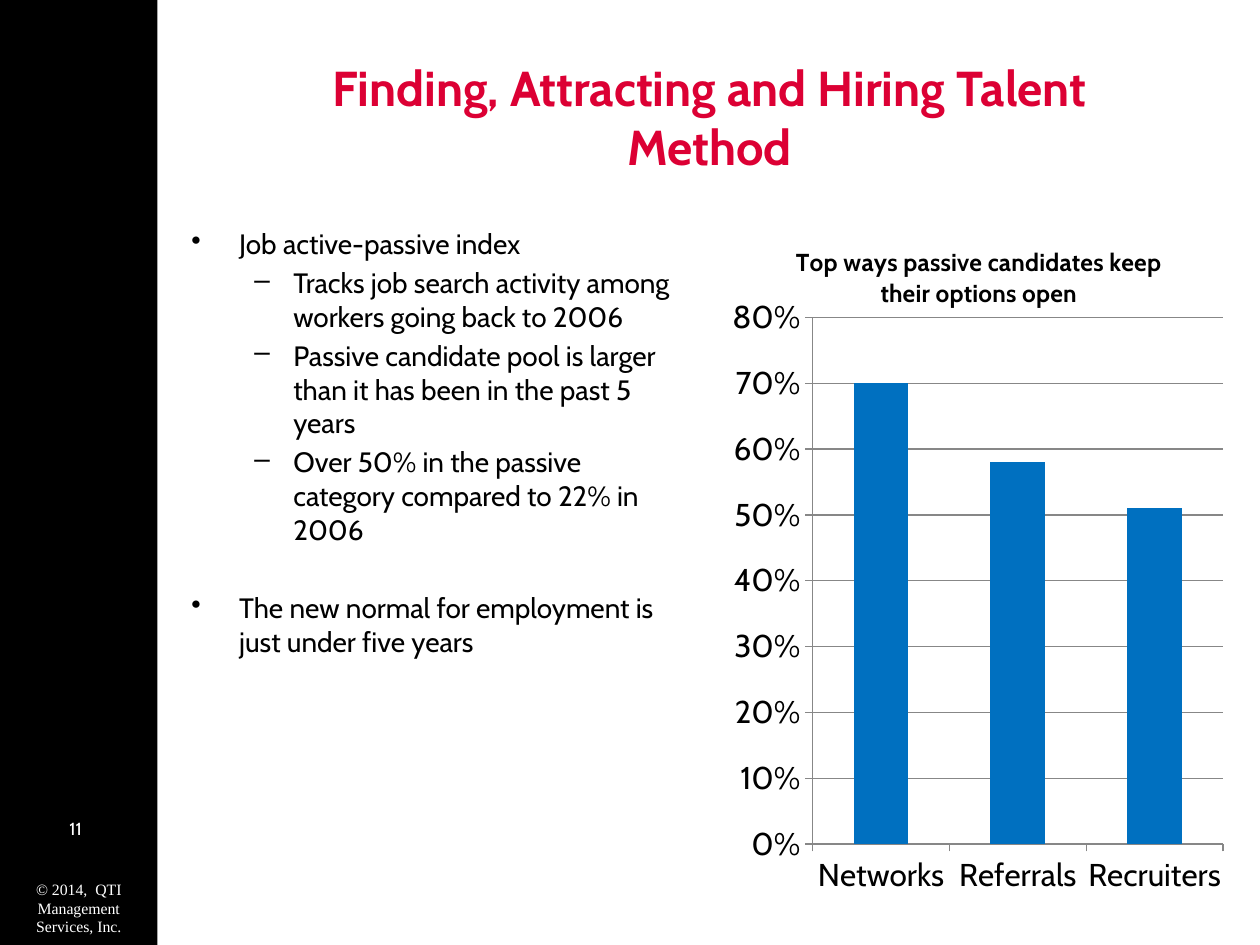
"""Build the talent slide with bullets and a column chart."""
from lxml import etree
from pptx import Presentation
from pptx.chart.data import CategoryChartData
from pptx.dml.color import RGBColor
from pptx.enum.chart import XL_CHART_TYPE, XL_TICK_MARK
from pptx.enum.shapes import MSO_SHAPE
from pptx.enum.text import MSO_ANCHOR, PP_ALIGN
from pptx.oxml.ns import qn
from pptx.util import Inches, Pt

COLUMN = XL_CHART_TYPE.COLUMN_CLUSTERED
OUT = XL_TICK_MARK.OUTSIDE
RECT = MSO_SHAPE.RECTANGLE
TOP, MIDDLE = MSO_ANCHOR.TOP, MSO_ANCHOR.MIDDLE
LEFT, CENTER = PP_ALIGN.LEFT, PP_ALIGN.CENTER
BLACK = RGBColor(0x00, 0x00, 0x00)
WHITE = RGBColor(0xFF, 0xFF, 0xFF)
RED = RGBColor(0xDC, 0x00, 0x34)
BLUE = RGBColor(0x00, 0x70, 0xC0)
GRAY = RGBColor(0x87, 0x87, 0x87)
SANS, SERIF = "Cabin", "Times New Roman"

TITLE = "Finding, Attracting and Hiring Talent\vMethod"
NUMBER = "11"
RIGHTS = "© 2014,  QTI Management Services, Inc."
POINTS = [
    (0, 0, "Job active-passive index"),
    (1, 3.2, "Tracks job search activity among workers going back to 2006"),
    (1, 3.2, "Passive candidate pool is larger than it has been in the past 5 years"),
    (1, 3.2, "Over 50% in the passive category compared to 22% in 2006"),
    (0, 25.7, "The new normal for employment is just under five years"),
]
LEVELS = [("•", 0.38, -0.38), ("–", 0.81, -0.31)]
CHART_TITLE = "Top ways passive candidates keep their options open"
WAYS = {"Networks": 0.7, "Referrals": 0.58, "Recruiters": 0.51}
PLOT = {"x": 0.18, "y": 0.14, "w": 0.79, "h": 0.76}


def style(font, size, color=BLACK, name=SANS, bold=False):
    font.size, font.name, font.bold = Pt(size), name, bold
    font.color.rgb = color


def add_text(slide, box, lines, size, color, name=SANS, bold=False,
             align=CENTER, anchor=TOP):
    frame = slide.shapes.add_textbox(*map(Inches, box)).text_frame
    frame.word_wrap = True
    frame.vertical_anchor = anchor
    frame.text = "\n".join(lines)
    for para in frame.paragraphs:
        para.alignment = align
        for run in para.runs:
            style(run.font, size, color, name, bold)
    return frame


def add_points(slide, box):
    lines = [text for _, _, text in POINTS]
    frame = add_text(slide, box, lines, 16, BLACK, align=LEFT)
    for para, (level, gap, _) in zip(frame.paragraphs, POINTS):
        mark, margin, indent = LEVELS[level]
        para.level = level
        para.space_before = Pt(gap)
        props = para._p.get_or_add_pPr()
        props.set("marL", str(Inches(margin)))
        props.set("indent", str(Inches(indent)))
        etree.SubElement(props, qn("a:buChar")).set("char", mark)


def place_plot(chart):
    area = chart._chartSpace.chart.plotArea
    for old in area.findall(qn("c:layout")):
        area.remove(old)
    layout = etree.Element(qn("c:layout"))
    area.insert(0, layout)
    manual = etree.SubElement(layout, qn("c:manualLayout"))
    parts = {"layoutTarget": "inner", "xMode": "edge", "yMode": "edge", **PLOT}
    for tag, value in parts.items():
        etree.SubElement(manual, qn("c:" + tag)).set("val", str(value))


def add_columns(slide, box):
    data = CategoryChartData(number_format="0%")
    data.categories = list(WAYS)
    data.add_series("Series 1", list(WAYS.values()))
    chart = slide.shapes.add_chart(COLUMN, *map(Inches, box), data).chart
    style(chart.font, 18)
    chart.has_legend = False
    chart.has_title = True
    title = chart.chart_title
    title.include_in_layout = False
    title.text_frame.text = CHART_TITLE
    style(title.text_frame.paragraphs[0].runs[0].font, 14, bold=True)
    for axis in (chart.category_axis, chart.value_axis):
        axis.major_tick_mark = OUT
        axis.format.line.color.rgb = GRAY
    scale = chart.value_axis
    scale.minimum_scale, scale.maximum_scale, scale.major_unit = 0, 0.8, 0.1
    scale.tick_labels.number_format = "0%"
    scale.tick_labels.number_format_is_linked = False
    scale.has_major_gridlines = True
    scale.major_gridlines.format.line.color.rgb = GRAY
    plot = chart.plots[0]
    plot.gap_width = 150
    plot.vary_by_categories = False
    fill = plot.series[0].format.fill
    fill.solid()
    fill.fore_color.rgb = BLUE
    place_plot(chart)


def main():
    deck = Presentation()
    deck.slide_width, deck.slide_height = Inches(10), Inches(7.5)
    slide = deck.slides.add_slide(deck.slide_layouts[6])
    band = slide.shapes.add_shape(RECT, 0, 0, Inches(1.25), Inches(7.5))
    band.shadow.inherit = False
    band.fill.solid()
    band.fill.fore_color.rgb = BLACK
    band.line.fill.background()
    add_text(slide, (0, 6.44, 1.2, 0.33), [NUMBER], 10, WHITE)
    add_text(slide, (0, 6.93, 1.25, 0.56), [RIGHTS], 9, WHITE, SERIF)
    add_text(slide, (1.42, 0.3, 8.42, 1.25), [TITLE], 28, RED, bold=True,
             anchor=MIDDLE)
    add_points(slide, (1.42, 1.75, 4.12, 5.5))
    add_columns(slide, (5.71, 1.75, 4.12, 5.5))
    deck.save("out.pptx")


if __name__ == "__main__":
    main()
